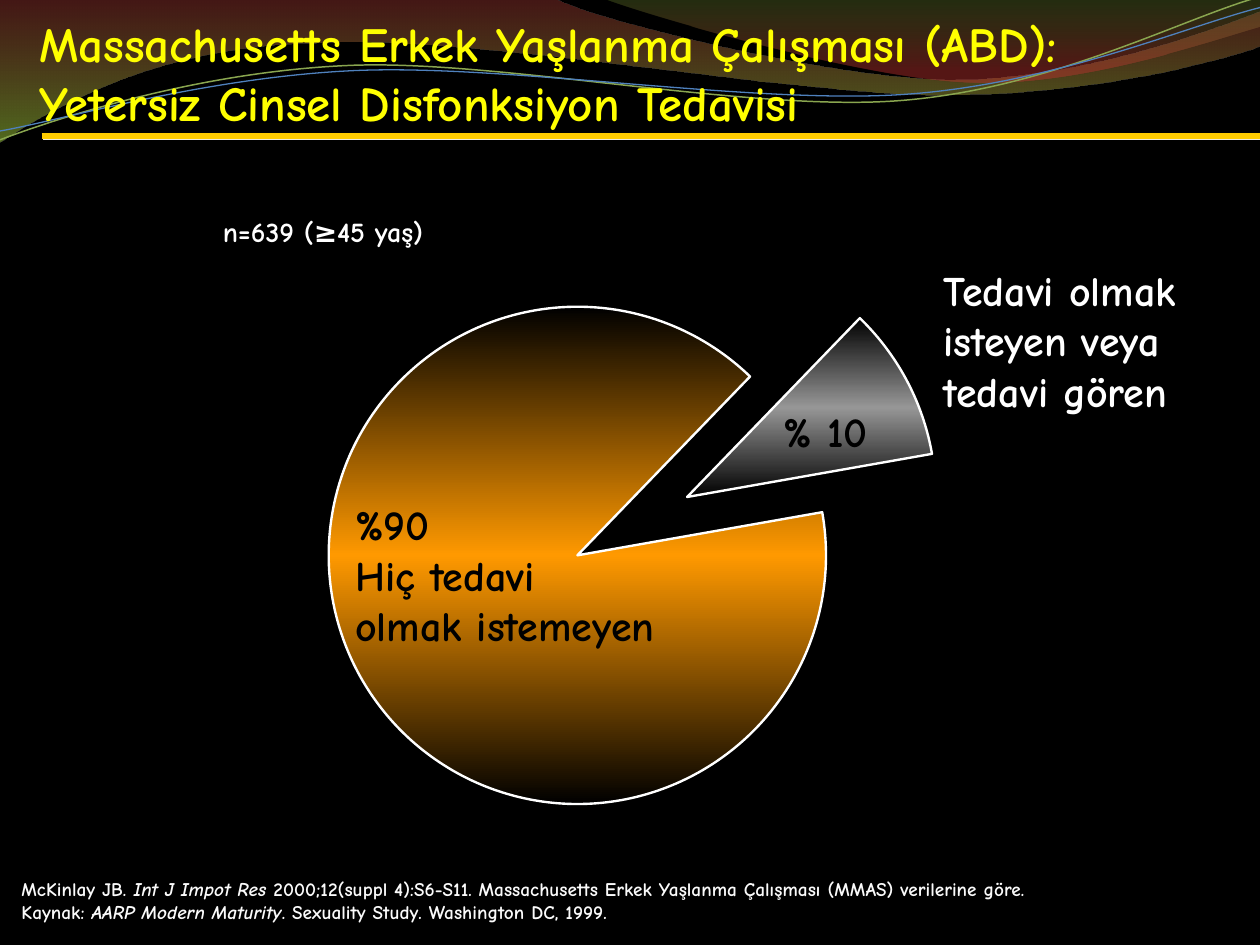
from lxml import etree
from pptx import Presentation
from pptx.chart.data import CategoryChartData
from pptx.dml.color import RGBColor
from pptx.enum.chart import XL_CHART_TYPE
from pptx.enum.shapes import MSO_CONNECTOR
from pptx.enum.text import MSO_ANCHOR, MSO_AUTO_SIZE
from pptx.oxml import parse_xml
from pptx.oxml.ns import nsdecls, qn
from pptx.util import Inches, Pt

PIE = XL_CHART_TYPE.PIE
STRAIGHT = MSO_CONNECTOR.STRAIGHT
TOP, BOTTOM = MSO_ANCHOR.TOP, MSO_ANCHOR.BOTTOM
FIT_SHAPE, NO_FIT = MSO_AUTO_SIZE.SHAPE_TO_FIT_TEXT, MSO_AUTO_SIZE.NONE

BLACK = RGBColor(0x00, 0x00, 0x00)
WHITE = RGBColor(0xFF, 0xFF, 0xFF)
OFF_WHITE = RGBColor(0xFA, 0xFA, 0xFA)
YELLOW = RGBColor(0xFF, 0xFF, 0x00)
GOLD = RGBColor(0xFF, 0xCC, 0x00)
CREAM = RGBColor(0xEE, 0xEC, 0xE1)
ORANGE = RGBColor(0xFF, 0x99, 0x00)
GRAY = RGBColor(0x96, 0x96, 0x96)
RED = RGBColor(0x97, 0x33, 0x30)
BRIGHT_RED = RGBColor(0xBE, 0x33, 0x30)
LIME = RGBColor(0x95, 0xC2, 0x38)
OLIVE = RGBColor(0x76, 0x95, 0x37)
GREEN = RGBColor(0x89, 0xA5, 0x4F)
BLUE = RGBColor(0x4F, 0x81, 0xBD)

TEXT_FONT, CHART_FONT = "Comic Neue", "Roboto"

# Header waves: a start point, then (x, y) for a line or six numbers for a curve.
# Gradient stops are (position %, colour, opacity %).
BANDS = [
    ([(0, -0.01), (4.4, -0.01), (4.76, 0.17, 6.64, 0.63, 7.58, 0.63),
      (8.53, 0.63, 9.58, 0.26, 10, 0.09), (10.01, 0.36),
      (9.83, 0.44, 8.7, 0.76, 7.46, 0.75), (6.22, 0.75, 3.82, 0.28, 2.57, 0.34),
      (1.29, 0.35, 0.46, 0.83, -0.01, 1.13)],
     [(0, RED, 45), (100, LIME, 55)]),
    ([(4.79, -0.01), (5.09, 0.11, 6.82, 0.62, 7.69, 0.65),
      (8.56, 0.69, 9.61, 0.32, 10, 0.21), (10, 0)],
     [(0, OLIVE, 30), (80, BRIGHT_RED, 45)]),
]
STRANDS = [
    ([(0, 1.11), (0.48, 0.93, 1.58, 0.57, 2.77, 0.52),
      (3.95, 0.47, 5.93, 0.89, 7.13, 0.8), (8.33, 0.71, 9.38, 0.15, 9.98, -0.02)],
     GREEN, 0.85),
    ([(0, 1.04), (0.47, 0.96, 1.64, 0.61, 2.83, 0.56),
      (4.03, 0.51, 5.97, 0.83, 7.17, 0.75), (8.36, 0.67, 9.41, 0.21, 10, 0.06)],
     BLUE, 0.75),
]

# Pie: category, value, colour in the middle of its gradient
SLICES = [("1", 90, ORANGE), ("2", 10, GRAY)]
CHART_BOX = (0.56, 1.22, 8.89, 5.89)
PLOT = {"x": 0.224, "y": 0.082, "w": 0.555, "h": 0.84}
FIRST_ANGLE, EXPLOSION = 80, 25

# Texts: box, lines of (text, italic) runs, format
TEXTS = [
    ((2.72, 3.91, 2.85, 1.72),
     [[("%90", False)], [("Hiç tedavi", False)], [("olmak istemeyen", False)]],
     dict(color=BLACK, wrap=False)),
    ((6.12, 3.17, 1.36, 0.5), [[("% 10", False)]], dict(color=BLACK)),
    ((7.39, 2.05, 2.49, 1.31),
     [[("Tedavi olmak isteyen veya", False)], [("tedavi gören", False)]], {}),
    ((0.31, 0.08, 9.25, 0.96),
     [[("Massachusetts Erkek Yaşlanma Çalışması (ABD):", False)],
      [("Yetersiz Cinsel Disfonksiyon Tedavisi", False)]],
     dict(size=28, color=YELLOW, anchor=BOTTOM, insets=(0, 0.05, 0, 0), fit=NO_FIT)),
    ((0.17, 6.96, 9.48, 0.37),
     [[("McKinlay JB. ", False), ("Int J Impot Res", True),
       (" 2000;12(suppl 4):S6-S11. Massachusetts Erkek Yaşlanma Çalışması "
        "(MMAS) verilerine göre.", False)],
      [("Kaynak: ", False), ("AARP Modern Maturity", True),
       (". Sexuality Study. Washington DC, 1999.", False)]],
     dict(size=11, color=OFF_WHITE, insets=(0, 0, 0, 0))),
    ((1.67, 1.65, 2.05, 0.4), [[("n=639 (≥45 yaş)", False)]], dict(size=16, wrap=False)),
]


def add_text(slide, box, lines, size=24, color=WHITE, wrap=True, anchor=TOP,
             insets=(0.1, 0.05, 0.1, 0.05), fit=FIT_SHAPE):
    frame = slide.shapes.add_textbox(*map(Inches, box)).text_frame
    frame.word_wrap, frame.vertical_anchor, frame.auto_size = wrap, anchor, fit
    (frame.margin_left, frame.margin_top,
     frame.margin_right, frame.margin_bottom) = map(Inches, insets)
    paragraph = frame.paragraphs[0]
    for number, line in enumerate(lines):
        if number:
            paragraph.add_line_break()
        for text, italic in line:
            run = paragraph.add_run()
            run.text = text
            font = run.font
            font.name, font.size, font.bold, font.italic = TEXT_FONT, Pt(size), True, italic
            font.color.rgb = color


def set_gradient(fill, properties, stops):
    """Vertical gradient with opacity, put in place of a solid fill."""
    fill.solid()
    stop_xml = "".join(
        f'<a:gs pos="{position * 1000}"><a:srgbClr val="{color}">'
        f'<a:alpha val="{opacity * 1000}"/></a:srgbClr></a:gs>'
        for position, color, opacity in stops)
    gradient = parse_xml(
        f'<a:gradFill {nsdecls("a")} rotWithShape="1"><a:gsLst>{stop_xml}</a:gsLst>'
        '<a:lin ang="5400000" scaled="0"/></a:gradFill>')
    properties.replace(properties.find(qn("a:solidFill")), gradient)


def add_wave(slide, segments, close):
    """Outline through every point; each run of three curve points becomes one Bézier."""
    points = [tuple(map(Inches, segment[i:i + 2]))
              for segment in segments for i in range(0, len(segment), 2)]
    builder = slide.shapes.build_freeform(*points[0], scale=1)
    builder.add_line_segments(points[1:], close=close)
    wave = builder.convert_to_shape()
    wave.shadow.inherit = False
    steps = iter(list(wave._element.iter(qn("a:lnTo"))))
    for segment in segments[1:]:
        first = next(steps)
        if len(segment) == 6:
            curve = etree.Element(qn("a:cubicBezTo"))
            first.addprevious(curve)
            for step in (first, next(steps), next(steps)):
                curve.append(step[0])
                step.getparent().remove(step)
    return wave


def add_header(slide):
    for segments, stops in BANDS:
        band = add_wave(slide, segments, close=True)
        set_gradient(band.fill, band._element.spPr, stops)
        band.line.fill.background()
    for segments, color, width in STRANDS:
        strand = add_wave(slide, segments, close=False)
        strand.fill.background()
        strand.line.color.rgb, strand.line.width = color, Pt(width)
    # Gold rule under the title, with a hard shadow
    rule = slide.shapes.add_connector(STRAIGHT, *map(Inches, (0.33, 1.08, 10, 1.08)))
    rule.line.color.rgb, rule.line.width = GOLD, Pt(3)
    rule._element.spPr.append(parse_xml(
        f'<a:effectLst {nsdecls("a")}><a:outerShdw dist="{Pt(1.4)}" dir="2700000" '
        f'algn="ctr" rotWithShape="0"><a:srgbClr val="{CREAM}"/></a:outerShdw></a:effectLst>'))


def add_pie(slide):
    data = CategoryChartData()
    data.categories = [name for name, _, _ in SLICES]
    data.add_series("Series 1", [value for _, value, _ in SLICES])
    chart = slide.shapes.add_chart(PIE, *map(Inches, CHART_BOX), data).chart
    chart.has_legend = chart.has_title = False
    font = chart.font
    font.name, font.size, font.bold, font.color.rgb = CHART_FONT, Pt(24.3), True, WHITE
    plot = chart.plots[0]
    plot.vary_by_categories = True
    series = plot.series[0]
    for index, (_, _, color) in enumerate(SLICES):
        look = series.points[index].format
        look.line.color.rgb, look.line.width = WHITE, Pt(1.35)
        look.fill.solid()
        properties = series._element.findall(qn("c:dPt"))[index].find(qn("c:spPr"))
        set_gradient(look.fill, properties, [(0, BLACK, 100), (50, color, 100), (100, BLACK, 100)])

    # Exploded slices, first angle and plot position
    explosion = etree.Element(qn("c:explosion"), val=str(EXPLOSION))
    series._element.find(qn("c:dPt")).addprevious(explosion)
    pie = series._element.getparent()
    for old in pie.findall(qn("c:firstSliceAng")):
        pie.remove(old)
    etree.SubElement(pie, qn("c:firstSliceAng"), val=str(FIRST_ANGLE))
    area = pie.getparent()
    for old in area.findall(qn("c:layout")):
        area.remove(old)
    parts = [("layoutTarget", "inner"), ("xMode", "edge"), ("yMode", "edge"), *PLOT.items()]
    settings = "".join(f'<c:{tag} val="{value}"/>' for tag, value in parts)
    area.insert(0, parse_xml(f'<c:layout {nsdecls("c")}><c:manualLayout>{settings}'
                             '</c:manualLayout></c:layout>'))


def main():
    deck = Presentation()
    deck.slide_width, deck.slide_height = Inches(10), Inches(7.5)
    slide = deck.slides.add_slide(deck.slide_layouts[6])
    slide.background.fill.solid()
    slide.background.fill.fore_color.rgb = BLACK
    add_header(slide)
    add_pie(slide)
    for box, lines, text_format in TEXTS:
        add_text(slide, box, lines, **text_format)
    deck.save("out.pptx")


if __name__ == "__main__":
    main()
